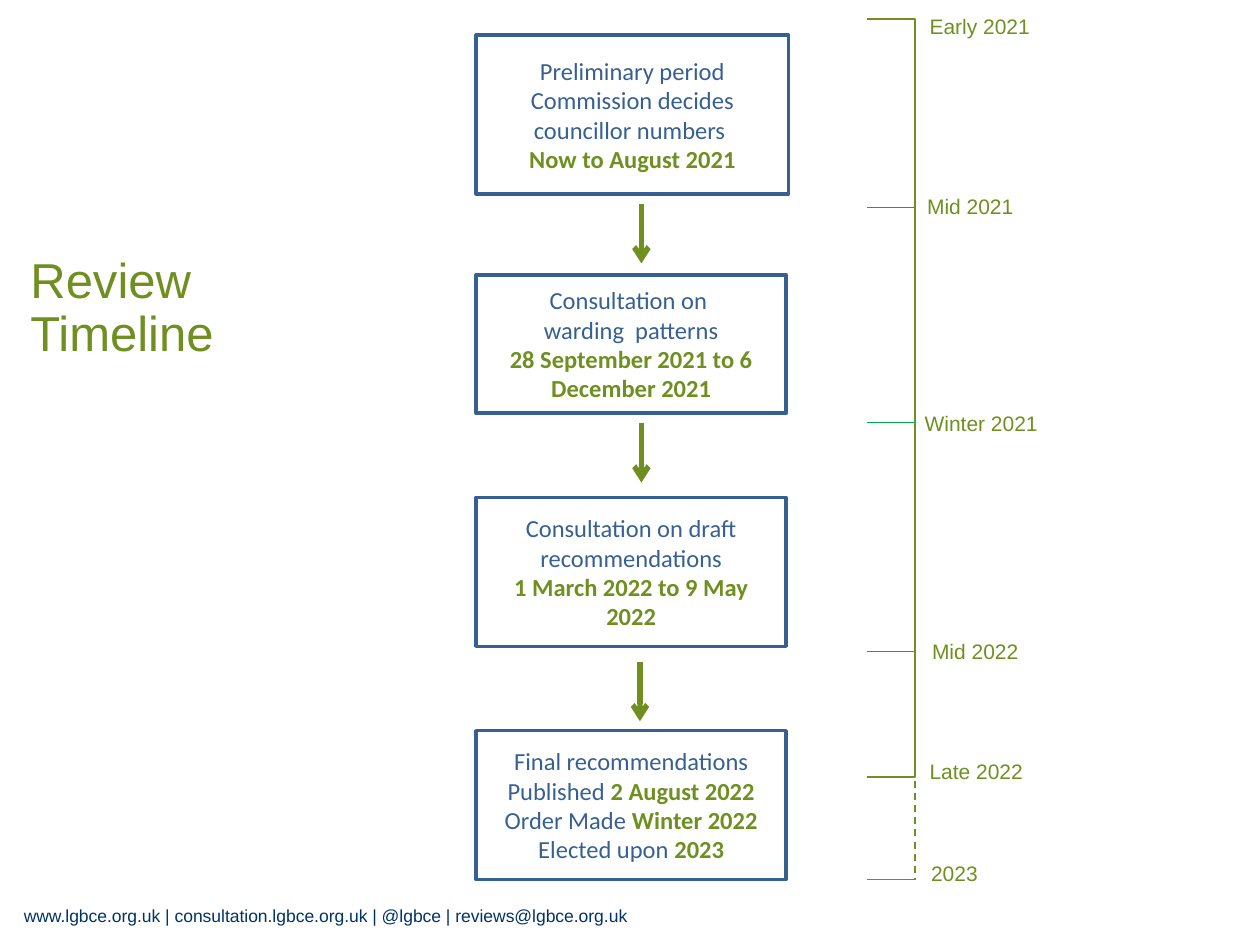
from dataclasses import dataclass

from lxml.etree import SubElement
from pptx import Presentation
from pptx.dml.color import RGBColor
from pptx.enum.dml import MSO_LINE
from pptx.enum.shapes import MSO_CONNECTOR, MSO_SHAPE
from pptx.enum.text import MSO_ANCHOR, MSO_AUTO_SIZE, PP_ALIGN
from pptx.oxml.ns import qn
from pptx.util import Cm, Pt


@dataclass(frozen=True)
class Theme:
    blue: RGBColor = RGBColor(0x37, 0x60, 0x92)
    olive: RGBColor = RGBColor(0x70, 0x8F, 0x21)
    green: RGBColor = RGBColor(0x00, 0xB0, 0x50)
    navy: RGBColor = RGBColor(0x00, 0x33, 0x66)
    white: RGBColor = RGBColor(0xFF, 0xFF, 0xFF)
    heading_font: str = "Arial"
    stage_font: str = "Calibri"
    title_size: Pt = Pt(28)
    stage_size: Pt = Pt(14)
    label_size: Pt = Pt(12)
    footer_size: Pt = Pt(10)


THEME = Theme()

STAGE_LEFT = 9.6
# Top, width, height, fill, and lines of (text, is a date) runs
STAGES = [
    (0.71, 6.3, 3.2, THEME.white, [
        [("Preliminary period", False)],
        [("Commission decides councillor numbers ", False)],
        [("Now to August 2021", True)]]),
    (5.54, 6.25, 2.79, THEME.white, [
        [("Consultation on ", False)],
        [("warding  patterns", False)],
        [("28 September 2021 to 6 December 2021", True)]]),
    (10.03, 6.25, 3, THEME.white, [
        [("Consultation on draft recommendations", False)],
        [("1 March 2022 to 9 May 2022", True)]]),
    (14.73, 6.25, 3, None, [
        [("Final recommendations", False)],
        [("Published ", False), ("2 August 2022", True)],
        [("Order Made ", False), ("Winter 2022", True)],
        [("Elected upon ", False), ("2023", True)]]),
]
ARROWS = [(12.93, 4.11), (12.93, 8.53), (12.9, 13.34)]
ARROW_LENGTH = 1.2

AXIS_LEFT, AXIS_RIGHT = 17.48, 18.44
AXIS_TOP, AXIS_HEIGHT = 0.38, 15.29
AXIS_END = 17.73
TICKS = [(4.19, THEME.green), (8.51, THEME.green), (13.13, THEME.green),
         (AXIS_END, THEME.olive)]
DATE_LABELS = [
    ("Early 2021", 18.49, 0.15), ("Mid 2021", 18.44, 3.78),
    ("Winter 2021", 18.39, 8.15), ("Mid 2022", 18.54, 12.75),
    ("Late 2022", 18.49, 15.16), ("2023", 18.52, 17.22),
]


def apply_format(target, values):
    for name, value in values.items():
        setattr(target, name, value)


def format_font(font, color, **values):
    apply_format(font, values)
    font.color.rgb = color


def place(shape, left, top, width, height):
    apply_format(shape, {"left": Cm(left), "top": Cm(top),
                         "width": Cm(width), "height": Cm(height)})


def add_line(shapes, start, end, color, width, arrow=False, dash=None):
    line = shapes.add_connector(MSO_CONNECTOR.STRAIGHT,
                                *(Cm(value) for value in start + end))
    line.line.color.rgb = color
    apply_format(line.line, {"width": Pt(width), "dash_style": dash})
    if arrow:
        SubElement(line.line._get_or_add_ln(), qn("a:tailEnd"), type="arrow")
    SubElement(line._element.spPr, qn("a:effectLst"))


def add_label(shapes, text, bounds, size, color):
    box = shapes.add_textbox(*(Cm(value) for value in bounds))
    box.text_frame.word_wrap = True
    box.text_frame.text = text
    format_font(box.text_frame.paragraphs[0].font, color,
                name=THEME.heading_font, size=size)


def add_stage(shapes, top, width, height, fill, lines):
    shape = shapes.add_shape(MSO_SHAPE.RECTANGLE, Cm(STAGE_LEFT), Cm(top),
                             Cm(width), Cm(height))
    shape.shadow.inherit = False
    if fill is None:
        shape.fill.background()
    else:
        shape.fill.solid()
        shape.fill.fore_color.rgb = fill
    shape.line.color.rgb = THEME.blue
    shape.line.width = Pt(2)
    frame = shape.text_frame
    apply_format(frame, {"word_wrap": True,
                         "vertical_anchor": MSO_ANCHOR.MIDDLE})
    for index, runs in enumerate(lines):
        paragraph = frame.add_paragraph() if index else frame.paragraphs[0]
        paragraph.alignment = PP_ALIGN.CENTER
        for text, is_date in runs:
            run = paragraph.add_run()
            run.text = text
            format_font(run.font, THEME.olive if is_date else THEME.blue,
                        name=THEME.stage_font, size=THEME.stage_size,
                        bold=is_date)


def add_date_axis(slide):
    shapes = slide.shapes.add_group_shape().shapes
    bracket = shapes.add_shape(MSO_SHAPE.RIGHT_BRACKET, Cm(AXIS_LEFT),
                               Cm(AXIS_TOP), Cm(AXIS_RIGHT - AXIS_LEFT),
                               Cm(AXIS_HEIGHT))
    bracket.adjustments[0] = 0
    bracket.shadow.inherit = False
    bracket.fill.background()
    bracket.line.color.rgb = THEME.olive
    bracket.line.width = Pt(1)
    for y, color in TICKS:
        add_line(shapes, (AXIS_LEFT, y), (AXIS_RIGHT, y), color, 0.75)
    for text, left, top in DATE_LABELS:
        add_label(shapes, text, (left, top, 3.15, 0.76),
                  THEME.label_size, THEME.olive)
    add_line(shapes, (AXIS_RIGHT, 14.76), (AXIS_RIGHT, AXIS_END),
             THEME.olive, 1, dash=MSO_LINE.DASH)


def format_title(title):
    place(title, 0.36, 5.03, 7.6, 2.41)
    title.text_frame.text = "Review Timeline"
    apply_format(title.text_frame, {
        "word_wrap": True, "vertical_anchor": MSO_ANCHOR.TOP,
        "auto_size": MSO_AUTO_SIZE.NONE})
    paragraph = title.text_frame.paragraphs[0]
    apply_format(paragraph, {"alignment": PP_ALIGN.LEFT, "line_spacing": 0.9})
    format_font(paragraph.font, THEME.olive,
                name=THEME.heading_font, size=THEME.title_size)


def main():
    presentation = Presentation()
    presentation.slide_width = Cm(25.4)
    presentation.slide_height = Cm(19.05)
    slide = presentation.slides.add_slide(presentation.slide_layouts[5])
    format_title(slide.shapes.title)
    for stage in STAGES:
        add_stage(slide.shapes, *stage)
    for x, top in ARROWS:
        add_line(slide.shapes, (x, top), (x, top + ARROW_LENGTH),
                 THEME.olive, 3, arrow=True)
    add_date_axis(slide)
    add_label(slide.shapes,
              "www.lgbce.org.uk | consultation.lgbce.org.uk | @lgbce | "
              "reviews@lgbce.org.uk",
              (0.23, 18.11, 13.61, 0.79), THEME.footer_size, THEME.navy)
    presentation.save("out.pptx")


if __name__ == "__main__":
    main()
